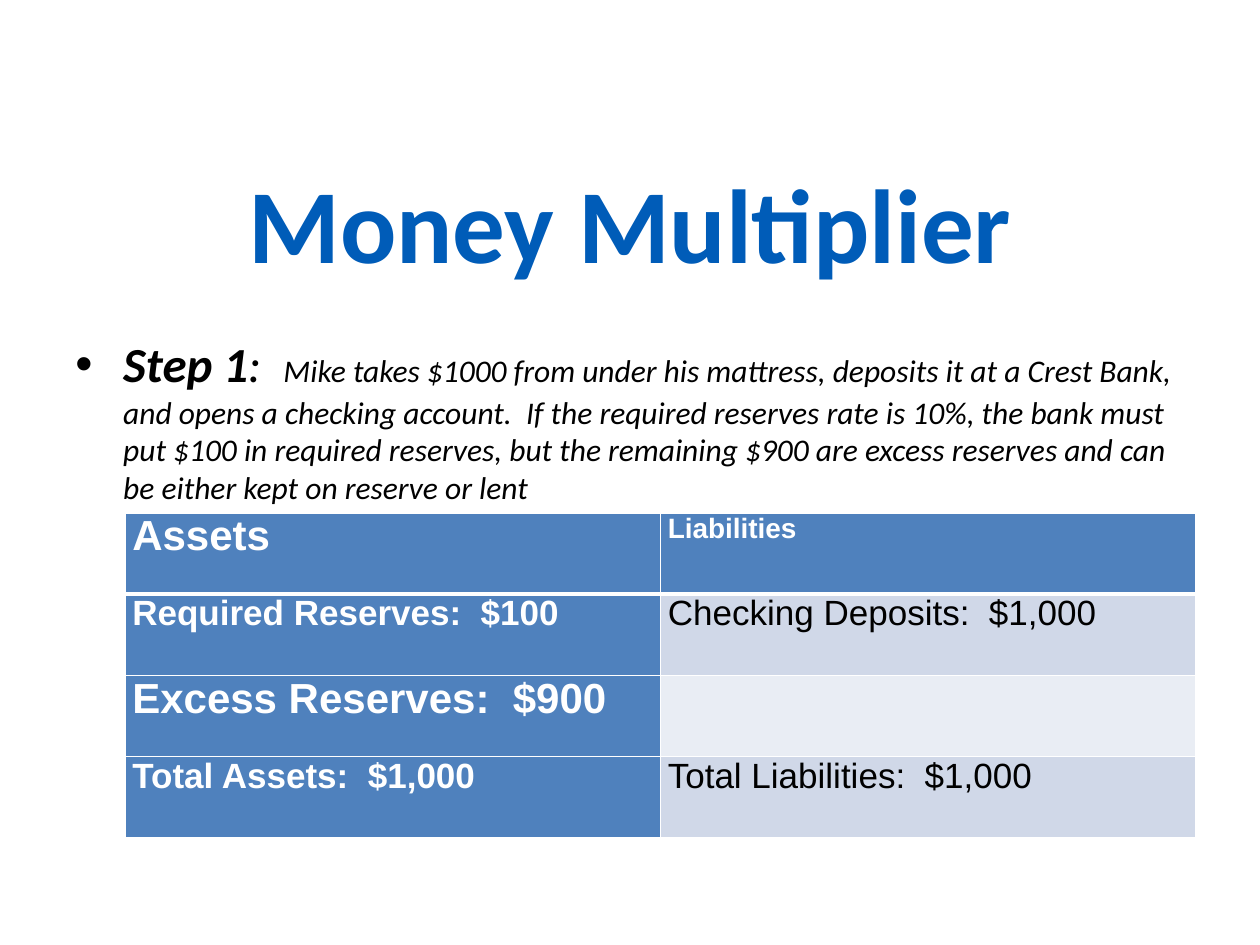
from dataclasses import dataclass

from lxml.etree import SubElement
from pptx import Presentation
from pptx.dml.color import RGBColor
from pptx.enum.text import MSO_ANCHOR, PP_ALIGN
from pptx.oxml import parse_xml
from pptx.oxml.ns import nsdecls, qn
from pptx.util import Inches, Pt

BLUE = RGBColor(0x00, 0x5C, 0xB8)
BLACK = RGBColor(0x00, 0x00, 0x00)
WHITE = RGBColor(0xFF, 0xFF, 0xFF)
HEADER = RGBColor(0x4F, 0x81, 0xBD)
BAND_DARK = RGBColor(0xD0, 0xD8, 0xE8)
BAND_LIGHT = RGBColor(0xE9, 0xED, 0xF4)


@dataclass
class Style:
    size: int
    color: RGBColor = BLACK
    bold: bool = False
    italic: bool = False
    font: str = "Calibri"


@dataclass
class Entry:
    text: str
    size: int = 20


BALANCE_SHEET = [
    (Entry("Assets", 24), Entry("Liabilities", 16)),
    (Entry("Required Reserves:  $100"), Entry("Checking Deposits:  $1,000")),
    (Entry("Excess Reserves:  $900", 24), Entry("")),
    (Entry("Total Assets:  $1,000"), Entry("Total Liabilities:  $1,000")),
]
STEP_RUNS = [
    ("Step 1", Style(28, bold=True, italic=True)),
    (":  ", Style(28, italic=True)),
    ("Mike takes $1000 from under his mattress, deposits it at a Crest Bank, "
     "and opens a checking account.  If the required reserves rate is 10%, "
     "the bank must put $100 in required reserves, but the remaining $900 are "
     "excess reserves and can be either kept on reserve or lent",
     Style(18, italic=True)),
]


def add_run(paragraph, text: str, style: Style) -> None:
    run = paragraph.add_run()
    run.text = text
    run.font.name = style.font
    run.font.size = Pt(style.size)
    run.font.bold = style.bold
    run.font.italic = style.italic
    run.font.color.rgb = style.color


def add_bullet(paragraph) -> None:
    properties = paragraph._p.get_or_add_pPr()
    properties.set("marL", str(Inches(0.38)))
    properties.set("indent", str(Inches(-0.38)))
    SubElement(properties, qn("a:buFont")).set("typeface", "Arial")
    SubElement(properties, qn("a:buChar")).set("char", "•")


def set_borders(cell, top: int, bottom: int) -> None:
    properties = cell._tc.get_or_add_tcPr()
    widths = {"lnL": 1, "lnR": 1, "lnT": top, "lnB": bottom}
    for index, (side, width) in enumerate(widths.items()):
        properties.insert(index, parse_xml(
            f'<a:{side} {nsdecls("a")} w="{Pt(width)}"><a:solidFill>'
            f'<a:srgbClr val="{WHITE}"/></a:solidFill></a:{side}>'))


def fill_cell(cell, entry: Entry, row: int, column: int) -> None:
    is_header = row == 0 or column == 0
    band = BAND_DARK if row % 2 else BAND_LIGHT
    cell.fill.solid()
    cell.fill.fore_color.rgb = HEADER if is_header else band
    cell.margin_left = cell.margin_right = Inches(0.06)
    cell.margin_top = cell.margin_bottom = 0
    if entry.text:
        color = WHITE if is_header else BLACK
        add_run(cell.text_frame.paragraphs[0], entry.text,
                Style(entry.size, color, bold=is_header, font="Arial"))
    # A thicker rule separates the header row from the rest
    set_borders(cell, top=3 if row == 1 else 1, bottom=3 if row == 0 else 1)


def main() -> None:
    presentation = Presentation()
    presentation.slide_width = Inches(10)
    presentation.slide_height = Inches(7.5)
    slide = presentation.slides.add_slide(presentation.slide_layouts[5])

    # Title
    title = slide.shapes.title
    title.left, title.top = Inches(0.5), Inches(1.24)
    title.width, title.height = Inches(9), Inches(1.25)
    title.text_frame.vertical_anchor = MSO_ANCHOR.MIDDLE
    paragraph = title.text_frame.paragraphs[0]
    paragraph.alignment = PP_ALIGN.CENTER
    paragraph.line_spacing = Pt(57)
    add_run(paragraph, "Money Multiplier", Style(60, BLUE, bold=True))

    # Step description
    body = slide.shapes.add_textbox(Inches(0.5), Inches(2.6), Inches(9), Inches(4.13))
    body.text_frame.word_wrap = True
    paragraph = body.text_frame.paragraphs[0]
    add_bullet(paragraph)
    paragraph.space_after = Pt(18)
    for text, style in STEP_RUNS:
        add_run(paragraph, text, style)

    # Balance sheet
    table = slide.shapes.add_table(len(BALANCE_SHEET), 2, Inches(0.99), Inches(4.07),
                                   Inches(8.5), Inches(2.58)).table
    for row, entries in enumerate(BALANCE_SHEET):
        for column, entry in enumerate(entries):
            fill_cell(table.cell(row, column), entry, row, column)

    presentation.save("out.pptx")


if __name__ == "__main__":
    main()
